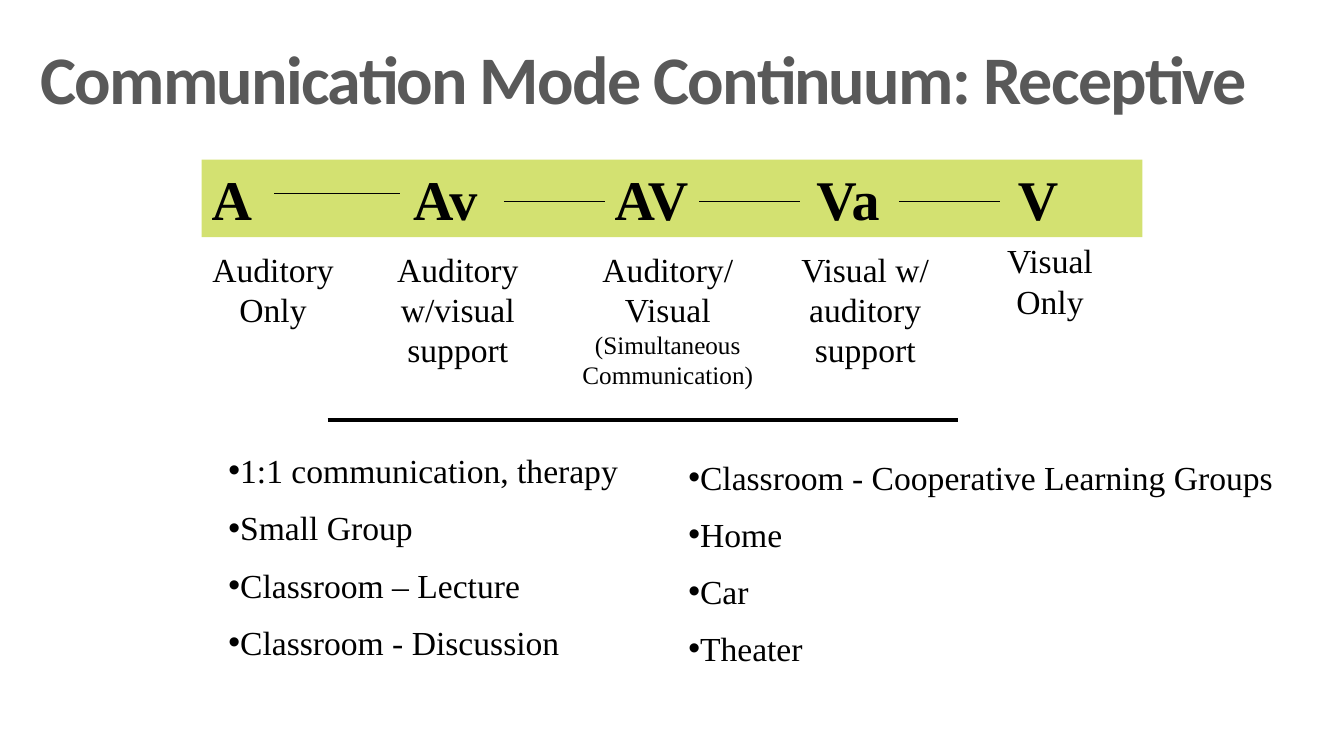
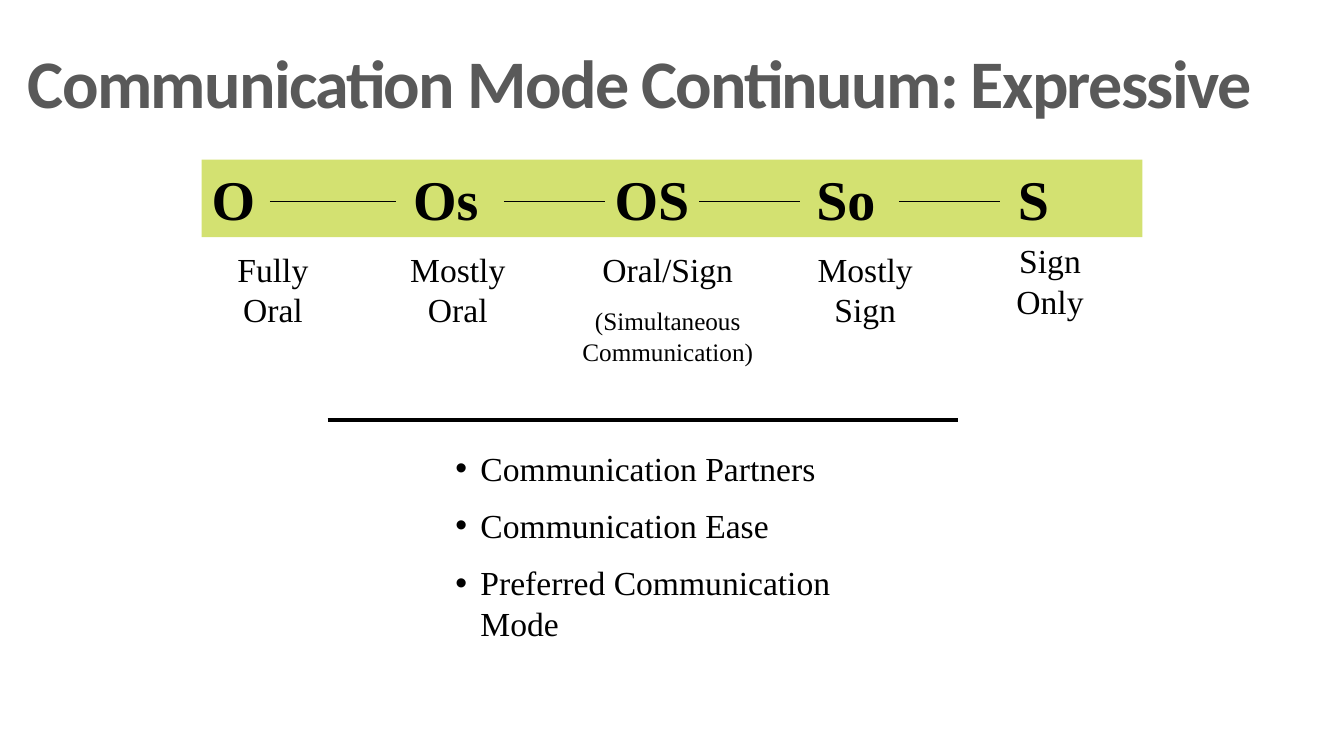
from itertools import zip_longest

from lxml import etree
from pptx import Presentation
from pptx import util as u
from pptx.dml.color import RGBColor
from pptx.enum import shapes, text
from pptx.oxml import ns

PX = 9525
BLACK = RGBColor(0, 0, 0)
GRAY = RGBColor(0x59, 0x59, 0x59)
LIME = RGBColor(0xD3, 0xE1, 0x71)
SERIF = {"name": "Times New Roman", "bold": False}
HEAD = {"name": "Calibri", "size": u.Pt(48.6), "bold": True}
BIG, SMALL = 24, 18
GAP = u.Pt(12)
STEP = 192
SLOTS = [(192, 232, 136), (360, 232, 152), (536, 232, 200),
         (752, 232, 144), (936, 224, 128)]
DASHES = [(480, 576), (666, 762), (856, 952)]


def emu(*nums):
    """Turn px lengths into EMU."""
    return [u.Emu(n * PX) for n in nums]


def place(shape, box):
    """Move and size a shape."""
    for key, val in zip(("left", "top", "width", "height"), emu(*box)):
        setattr(shape, key, val)


def style(font, color, form):
    """Apply format values to a font."""
    for key, val in form.items():
        setattr(font, key, val)
    font.color.rgb = color


def setup(shape, anchor=text.MSO_ANCHOR.TOP):
    """Give a shape's text the shared frame settings."""
    frame = shape.text_frame
    form = {"word_wrap": True, "auto_size": text.MSO_AUTO_SIZE.NONE,
            "vertical_anchor": anchor}
    for key, val in form.items():
        setattr(frame, key, val)
    return frame


def paras(frame, count):
    """Yield spaced paragraphs of a frame."""
    for i in range(count):
        para = frame.add_paragraph() if i else frame.paragraphs[0]
        para.space_before = GAP if i else 0
        yield para


def title(slide, words, box):
    """Fill the title placeholder."""
    shape = slide.shapes.title
    place(shape, box)
    para = setup(shape, text.MSO_ANCHOR.MIDDLE).paragraphs[0]
    para.alignment = text.PP_ALIGN.CENTER
    para.line_spacing = 0.85
    run = para.add_run()
    run.text = words
    style(run.font, GRAY, HEAD)
    run.font._element.set("spc", "-120")


def band(slide, marks):
    """Draw the green band with evenly tabbed marks."""
    shape = slide.shapes.add_shape(shapes.MSO_SHAPE.RECTANGLE,
                                   *emu(192, 152, 896, 74))
    shape.shadow.inherit = False
    shape.fill.solid()
    shape.fill.fore_color.rgb = LIME
    shape.line.fill.background()
    para = setup(shape).paragraphs[0]
    para.alignment = text.PP_ALIGN.LEFT
    tabs = etree.SubElement(para._p.get_or_add_pPr(), ns.qn("a:tabLst"))
    for i in range(1, len(marks)):
        etree.SubElement(tabs, ns.qn("a:tab"), pos=str(i * STEP * PX), algn="l")
    run = para.add_run()
    run.text = "\t".join(marks)
    style(run.font, BLACK, SERIF | {"size": u.Pt(40), "bold": True})


def label(slide, slot, high, lines):
    """Add a centred label whose lines hold (words, size) runs."""
    box = slide.shapes.add_textbox(*emu(*slot, high))
    for para, runs in zip(paras(setup(box), len(lines)), lines):
        para.alignment = text.PP_ALIGN.CENTER
        for words, size in runs:
            run = para.add_run()
            run.text = words
            style(run.font, BLACK, SERIF | {"size": u.Pt(size)})


def line(slide, x1, x2, y, width=0.75):
    """Draw a level black line."""
    link = slide.shapes.add_connector(shapes.MSO_CONNECTOR.STRAIGHT,
                                      *emu(x1, y, x2, y))
    link.line.color.rgb = BLACK
    link.line.width = u.Pt(width)
    etree.SubElement(link._element.spPr, ns.qn("a:effectLst"))


def bullets(shape, box, items, hang=0):
    """Fill a body placeholder with a bulleted list."""
    place(shape, box)
    for para, item in zip(paras(setup(shape), len(items)), items):
        props = para._p.get_or_add_pPr()
        props.set("marL", str(hang * PX))
        props.set("indent", str(-hang * PX))
        etree.SubElement(props, ns.qn("a:buChar"), char="•")
        para.alignment = text.PP_ALIGN.LEFT
        run = para.add_run()
        run.text = item
        style(run.font, BLACK, SERIF | {"size": u.Pt(BIG)})


def build(deck, layout, head, marks, first, labels, lists, hang=0):
    """Add one continuum slide."""
    slide = deck.slides.add_slide(deck.slide_layouts[layout])
    title(slide, *head)
    band(slide, marks)
    for slot, (high, *lines) in zip(SLOTS, labels):
        label(slide, slot, high, lines)
    line(slide, *first)
    for x1, x2 in DASHES:
        line(slide, x1, x2, 192)
    bodies = list(slide.placeholders)[1:]
    for body, (box, items) in zip(bodies, lists):
        bullets(body, box, items, hang)
    line(slide, 312, 912, 400, 3)


def main():
    """Build and save the deck."""
    deck = Presentation()
    deck.slide_width, deck.slide_height = emu(1280, 720)
    note = ("(Simultaneous Communication)", SMALL)
    build(
        deck, 3,
        ("Communication Mode Continuum: Receptive", (9, 49, 1207, 62)),
        ["A", "Av", "AV", "Va", "V"], (261, 381, 184),
        [(88, [("Auditory Only", BIG)]),
         (126, [("Auditory w/visual support", BIG)]),
         (144, [("Auditory/ Visual ", BIG), note]),
         (126, [("Visual w/ auditory support", BIG)]),
         (88, [("Visual Only", BIG)])],
        [((208, 424, 400, 223),
          ["1:1 communication, therapy", "Small Group",
           "Classroom – Lecture", "Classroom - Discussion"]),
         ((646, 430, 587, 223),
          ["Classroom - Cooperative Learning Groups", "Home", "Car",
           "Theater"])])
    build(
        deck, 1,
        ("Communication Mode Continuum: Expressive", (0, 53, 1218, 62)),
        ["O", "Os", "OS", "So", "S"], (257, 377, 192),
        [(88, [("Fully Oral", BIG)]),
         (88, [("Mostly Oral", BIG)]),
         (121, [("Oral/Sign", BIG)], [note]),
         (88, [("Mostly Sign", BIG)]),
         (88, [("Sign Only", BIG)])],
        [((424, 422, 400, 298),
          ["Communication Partners", "Communication Ease",
           "Preferred Communication Mode"])], 24)
    deck.save("out.pptx")


if __name__ == "__main__":
    main()
